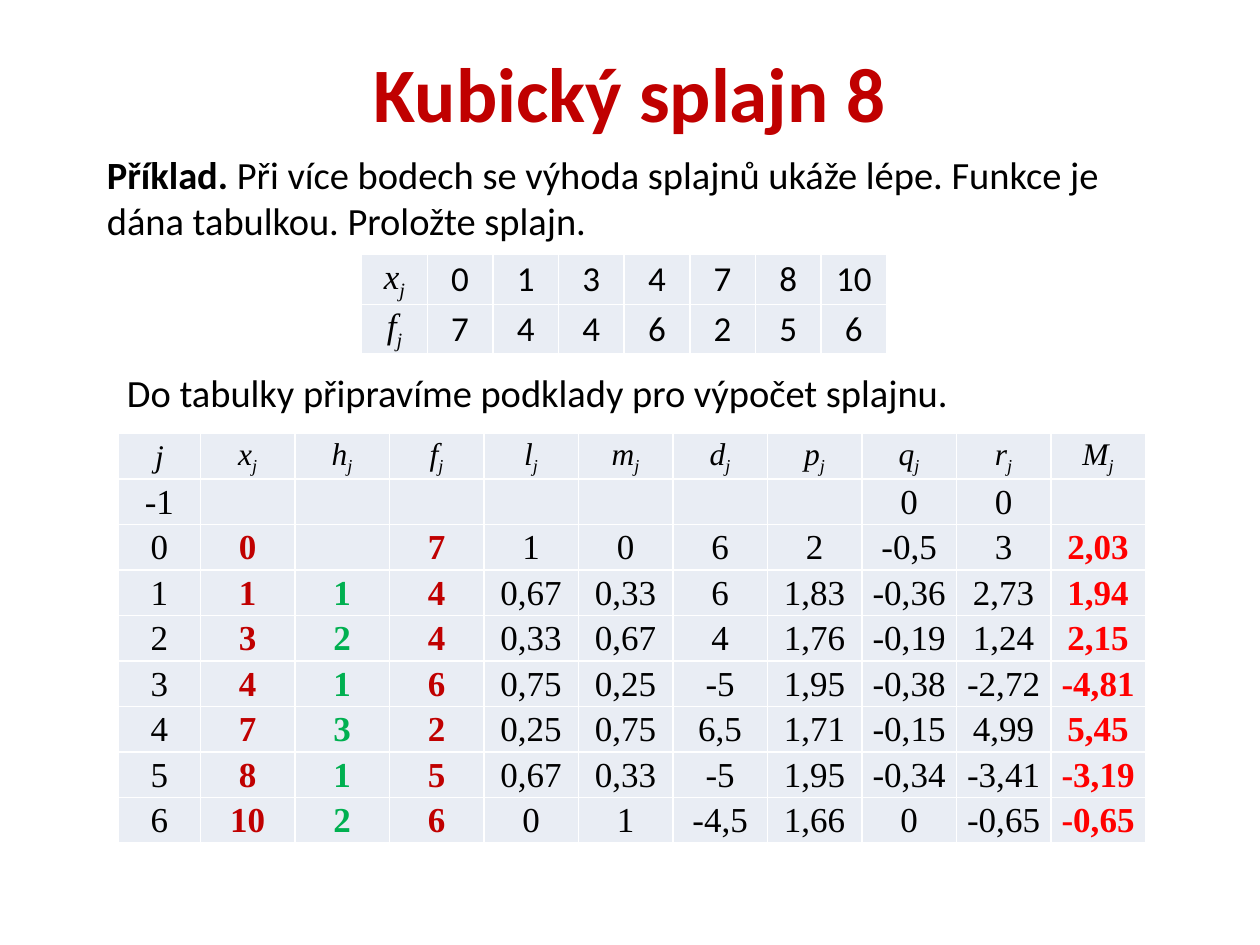
from pptx import Presentation
from pptx import util as u
from pptx.dml import color
from pptx.enum import text
from pptx.oxml import parse_xml
from pptx.oxml.ns import nsdecls

BLACK, WHITE, CELL = "000000", "FFFFFF", "E9EDF4"
DARK_RED, RED, GREEN = "C00000", "FF0000", "00B050"
SANS, SERIF = "Calibri", "Times New Roman"

POINTS = [
    ["xj", "0", "1", "3", "4", "7", "8", "10"],
    ["fj", "7", "4", "4", "6", "2", "5", "6"],
]
SPLINE = [
    ["j", "xj", "hj", "fj", "lj", "mj", "dj", "pj", "qj", "rj", "Mj"],
    ["-1", "", "", "", "", "", "", "", "0", "0", ""],
    ["0", "0", "", "7", "1", "0", "6", "2", "-0,5", "3", "2,03"],
    ["1", "1", "1", "4", "0,67", "0,33", "6", "1,83", "-0,36", "2,73", "1,94"],
    ["2", "3", "2", "4", "0,33", "0,67", "4", "1,76", "-0,19", "1,24", "2,15"],
    ["3", "4", "1", "6", "0,75", "0,25", "-5", "1,95", "-0,38", "-2,72", "-4,81"],
    ["4", "7", "3", "2", "0,25", "0,75", "6,5", "1,71", "-0,15", "4,99", "5,45"],
    ["5", "8", "1", "5", "0,67", "0,33", "-5", "1,95", "-0,34", "-3,41", "-3,19"],
    ["6", "10", "2", "6", "0", "1", "-4,5", "1,66", "0", "-0,65", "-0,65"],
]
SPLINE_COLOURS = {1: DARK_RED, 2: GREEN, 3: DARK_RED, 10: RED}


def rgb(value):
    return color.RGBColor.from_string(value)


def add_span(para, words, size, name=SANS, colour=BLACK, bold=False,
             italic=False, subscript=False):
    span = para.add_run()
    span.text = words
    look = dict(size=u.Pt(size), name=name, bold=bold, italic=italic)
    for key, value in look.items():
        setattr(span.font, key, value)
    span.font.color.rgb = rgb(colour)
    if subscript:
        span.font._element.set("baseline", "-25000")


def add_text(page, box, spans, align=text.PP_ALIGN.LEFT, anchor=text.MSO_ANCHOR.TOP):
    frame = page.shapes.add_textbox(*map(u.Inches, box)).text_frame
    frame.word_wrap = True
    frame.vertical_anchor = anchor
    para = frame.paragraphs[0]
    para.alignment = align
    for span in spans:
        add_span(para, **span)


def style_cell(cell):
    layout = dict(margin_left=u.Inches(0.01), margin_right=u.Inches(0.01),
                  margin_top=u.Inches(0.01), margin_bottom=0,
                  vertical_anchor=text.MSO_ANCHOR.MIDDLE)
    for key, value in layout.items():
        setattr(cell, key, value)
    # White borders come before the fill in the cell properties
    for side in ("lnL", "lnR", "lnT", "lnB"):
        cell._tc.get_or_add_tcPr().append(parse_xml(
            f'<a:{side} {nsdecls("a")} w="{u.Pt(1)}"><a:solidFill>'
            f'<a:srgbClr val="{WHITE}"/></a:solidFill></a:{side}>'))
    cell.fill.solid()
    cell.fill.fore_color.rgb = rgb(CELL)


def add_grid(page, box, rows, widths, write_cell):
    table = page.shapes.add_table(len(rows), len(widths), *map(u.Inches, box)).table
    table.first_row = table.horz_banding = False
    for column, width in zip(table.columns, widths):
        column.width = u.Inches(width)
    for r, values in enumerate(rows):
        table.rows[r].height = u.Inches(box[3] / len(rows))
        for c, value in enumerate(values):
            cell = table.cell(r, c)
            style_cell(cell)
            para = cell.text_frame.paragraphs[0]
            para.alignment = text.PP_ALIGN.CENTER
            if value:
                write_cell(para, value, r, c)


def write_symbol(para, symbol, size):
    """Write an italic letter, with the rest of the symbol as its index."""
    add_span(para, symbol[0], size, SERIF, italic=True)
    if symbol[1:]:
        add_span(para, symbol[1:], size, SERIF, italic=True, subscript=True)


def write_point(para, value, row, column):
    if column == 0:
        write_symbol(para, value, 20)
    else:
        add_span(para, value, 20)


def write_spline(para, value, row, column):
    if row == 0:
        write_symbol(para, value, 18)
    else:
        add_span(para, value, 20, SERIF, SPLINE_COLOURS.get(column, BLACK),
                 bold=column in SPLINE_COLOURS)


def add_title(page, box):
    add_text(page, box,
             [dict(words="Kubický splajn 8", size=44, colour=DARK_RED, bold=True)],
             text.PP_ALIGN.CENTER, text.MSO_ANCHOR.MIDDLE)


def add_example(page, box):
    add_text(page, box, [
        dict(words="Příklad.", size=22, bold=True),
        dict(words=" Při více bodech se výhoda splajnů ukáže lépe. "
                   "Funkce je dána tabulkou. Proložte splajn.", size=22)])


def add_lead_in(page, box):
    add_text(page, box, [
        dict(words="Do tabulky připravíme podklady pro výpočet splajnu.", size=22)])


def add_points_table(page, box):
    count = len(POINTS[0])
    add_grid(page, box, POINTS, [box[2] / count] * count, write_point)


def add_spline_table(page, box):
    first, others = 0.65, len(SPLINE[0]) - 1
    widths = [first] + [(box[2] - first) / others] * others
    add_grid(page, box, SPLINE, widths, write_spline)


def main():
    deck = Presentation()
    deck.slide_width, deck.slide_height = u.Inches(10), u.Inches(7.5)
    page = deck.slides.add_slide(deck.slide_layouts[6])
    # Title, task with its points, then the spline calculation
    add_title(page, (0.5, 0.3, 9, 0.85))
    add_points_table(page, (2.87, 2.02, 4.17, 0.79))
    add_example(page, (0.75, 1.15, 8.19, 0.84))
    add_lead_in(page, (0.91, 2.88, 7.8, 0.47))
    add_spline_table(page, (0.94, 3.44, 8.15, 3.25))
    deck.save("out.pptx")


if __name__ == "__main__":
    main()
